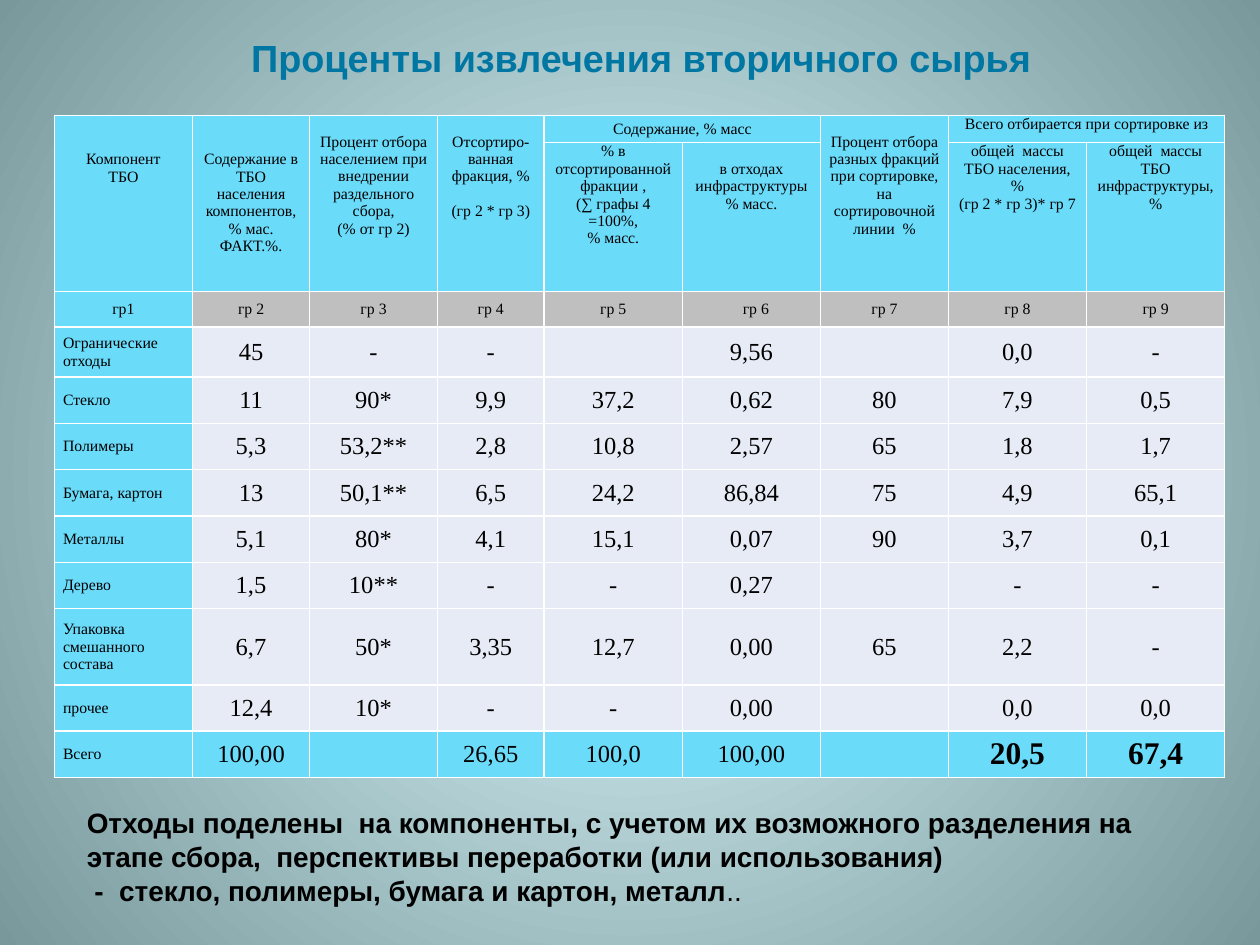
from dataclasses import dataclass

from lxml.etree import SubElement
from pptx import Presentation
from pptx.dml.color import RGBColor
from pptx.enum.text import MSO_ANCHOR, PP_ALIGN
from pptx.oxml.ns import qn
from pptx.util import Pt


@dataclass(frozen=True)
class Theme:
    """Colours, fonts and type sizes of the slide."""
    glow: str = "DEFBFF"
    edge: str = "79989C"
    title: str = "0076A3"
    text: str = "000000"
    accent: str = "6BDBFA"
    index: str = "BFBFBF"
    body: str = "E7EBF5"
    border: str = "FFFFFF"
    heading_font: str = "Arial"
    table_font: str = "Times New Roman"
    title_size: float = 21.6
    note_size: float = 16
    label_size: float = 9
    value_size: float = 14
    total_size: float = 18


THEME = Theme()
LINE = 10
INSET = 5
COLUMN_WIDTHS = [79, 67, 73, 61, 79, 79, 73, 79, 79]
ROW_HEIGHTS = [15.5, 81, 20.5, 28.5] + [26.5] * 5 + [43.5] + [26.5] * 2


@dataclass(frozen=True)
class Header:
    """One heading cell: its place, span, lead above the text and lines."""
    row: int
    column: int
    rows: int
    columns: int
    lead: float
    lines: tuple
    gap: float = 0


HEADERS = [
    Header(0, 0, 2, 1, 2 * LINE, ("Компонент", "ТБО")),
    Header(0, 1, 2, 1, 2 * LINE,
           ("Содержание в ТБО населения компонентов,", "% мас.", "ФАКТ.%.")),
    Header(0, 2, 2, 1, LINE,
           ("Процент отбора населением при внедрении раздельного сбора,", "(% от гр 2)")),
    Header(0, 3, 2, 1, LINE, ("Отсортиро-ванная фракция, %", "(гр 2 * гр 3)"), LINE),
    Header(0, 4, 1, 2, 3, ("Содержание, % масс",)),
    Header(0, 6, 2, 1, LINE,
           ("Процент отбора разных фракций при сортировке, на сортировочной линии  %",)),
    Header(0, 7, 1, 2, 0, ("Всего отбирается при сортировке из",)),
    Header(1, 4, 1, 1, 0,
           ("% в отсортированной фракции ,", "(∑ графы 4 =100%,", "% масс.")),
    Header(1, 5, 1, 1, LINE, ("в отходах инфраструктуры % масс.",)),
    Header(1, 7, 1, 1, 0, ("общей  массы ТБО населения, %", "(гр 2 * гр 3)* гр 7")),
    Header(1, 8, 1, 1, 0, ("общей  массы ТБО инфраструктуры, %",)),
]
INDEX = ["гр1"] + [f"гр {number}" for number in range(2, 10)]
ROWS = [
    ["Огранические отходы", "45", "-", "-", "", "9,56", "", "0,0", "-"],
    ["Стекло", "11", "90*", "9,9", "37,2", "0,62", "80", "7,9", "0,5"],
    ["Полимеры", "5,3", "53,2**", "2,8", "10,8", "2,57", "65", "1,8", "1,7"],
    ["Бумага, картон", "13", "50,1**", "6,5", "24,2", "86,84", "75", "4,9", "65,1"],
    ["Металлы", "5,1", "80*", "4,1", "15,1", "0,07", "90", "3,7", "0,1"],
    ["Дерево", "1,5", "10**", "-", "-", "0,27", "", "-", "-"],
    ["Упаковка смешанного состава", "6,7", "50*", "3,35", "12,7", "0,00", "65", "2,2", "-"],
    ["прочее", "12,4", "10*", "-", "-", "0,00", "", "0,0", "0,0"],
    ["Всего", "100,00", "", "26,65", "100,0", "100,00", "", "20,5", "67,4"],
]


def set_font(font, name, size, color, bold=False):
    """Set every property of a font."""
    font.name, font.size, font.bold = name, Pt(size), bold
    font.color.rgb = RGBColor.from_string(color)


def fill_background(slide):
    """Fill the slide with a circular gradient from its centre."""
    fill = slide.background.fill
    fill.gradient()
    for stop, position, color in zip(fill.gradient_stops, (0, 1), (THEME.glow, THEME.edge)):
        stop.position = position
        stop.color.rgb = RGBColor.from_string(color)
    linear = slide.element.find(".//" + qn("a:lin"))
    gradient = linear.getparent()
    gradient.remove(linear)
    circle = SubElement(gradient, qn("a:path"), path="circle")
    SubElement(circle, qn("a:fillToRect"), l="50000", t="50000", r="50000", b="50000")


def add_text_frame(slide, left, top, width, height):
    """Add a wrapping text box and return its text frame."""
    frame = slide.shapes.add_textbox(Pt(left), Pt(top), Pt(width), Pt(height)).text_frame
    frame.word_wrap = True
    return frame


def add_title(slide, left, top, width, height):
    """Add the centred slide title."""
    frame = add_text_frame(slide, left, top, width, height)
    frame.vertical_anchor = MSO_ANCHOR.MIDDLE
    paragraph = frame.paragraphs[0]
    paragraph.text = "Проценты извлечения вторичного сырья"
    paragraph.alignment = PP_ALIGN.CENTER
    set_font(paragraph.font, THEME.heading_font, THEME.title_size, THEME.title, True)


def add_borders(cell):
    """Draw a thin line on each side of a cell."""
    properties = cell._tc.get_or_add_tcPr()
    for side in ("lnL", "lnR", "lnT", "lnB"):
        line = SubElement(properties, qn("a:" + side), w=str(Pt(1)))
        SubElement(SubElement(line, qn("a:solidFill")), qn("a:srgbClr"), val=THEME.border)


def write_cell(cell, lines, size, bold=False, alignment=PP_ALIGN.CENTER,
               anchor=MSO_ANCHOR.MIDDLE, lead=0, gap=0):
    """Write the lines of a cell, with a lead above and a gap between them."""
    cell.margin_left = cell.margin_right = Pt(INSET)
    cell.margin_top, cell.margin_bottom = Pt(lead), Pt(0)
    cell.vertical_anchor = anchor
    cell.text = "\n".join(lines)
    for number, paragraph in enumerate(cell.text_frame.paragraphs):
        paragraph.alignment = alignment
        if number and gap:
            paragraph.space_before = Pt(gap)
        set_font(paragraph.font, THEME.table_font, size, THEME.text, bold)


def cell_color(row, column):
    """Return the fill of the cell at a row and column."""
    if column == 0 or row < 2 or row == len(ROW_HEIGHTS) - 1:
        return THEME.accent
    return THEME.index if row == 2 else THEME.body


def add_recovery_table(slide, left, top):
    """Add the table of recovery percentages."""
    table = slide.shapes.add_table(
        len(ROW_HEIGHTS), len(COLUMN_WIDTHS), Pt(left), Pt(top),
        Pt(sum(COLUMN_WIDTHS)), Pt(sum(ROW_HEIGHTS))).table
    table.first_row = table.horz_banding = False
    for column, width in zip(table.columns, COLUMN_WIDTHS):
        column.width = Pt(width)
    for row, height in zip(table.rows, ROW_HEIGHTS):
        row.height = Pt(height)
    for row in range(len(ROW_HEIGHTS)):
        for column in range(len(COLUMN_WIDTHS)):
            cell = table.cell(row, column)
            add_borders(cell)
            cell.fill.solid()
            cell.fill.fore_color.rgb = RGBColor.from_string(cell_color(row, column))
    for header in HEADERS:
        cell = table.cell(header.row, header.column)
        if header.rows * header.columns > 1:
            cell.merge(table.cell(header.row + header.rows - 1,
                                  header.column + header.columns - 1))
        write_cell(cell, header.lines, THEME.label_size, anchor=MSO_ANCHOR.TOP,
                   lead=header.lead, gap=header.gap)
    for column, label in enumerate(INDEX):
        write_cell(table.cell(2, column), [label], THEME.label_size)
    table.cell(2, 5).margin_left = Pt(2 * INSET)
    for row, (label, *values) in enumerate(ROWS, 3):
        write_cell(table.cell(row, 0), [label], THEME.label_size, alignment=PP_ALIGN.LEFT)
        for column, value in enumerate(values, 1):
            total = row == len(ROW_HEIGHTS) - 1 and column >= 7
            size = THEME.total_size if total else THEME.value_size
            write_cell(table.cell(row, column), [value], size, total)


def add_note(slide, left, top, width, height):
    """Add the note about the waste components."""
    frame = add_text_frame(slide, left, top, width, height)
    first, second = frame.paragraphs[0], frame.add_paragraph()
    first.text = ("Отходы поделены  на компоненты, с учетом их возможного разделения на "
                  "этапе сбора,  перспективы переработки (или использования)")
    set_font(first.font, THEME.heading_font, THEME.note_size, THEME.text, True)
    for text, bold in ((" -  стекло, полимеры, бумага и картон, металл", True), ("..", False)):
        run = second.add_run()
        run.text = text
        set_font(run.font, THEME.heading_font, THEME.note_size, THEME.text, bold)


def main():
    """Build the slide and save it."""
    presentation = Presentation()
    presentation.slide_width, presentation.slide_height = Pt(720), Pt(540)
    slide = presentation.slides.add_slide(presentation.slide_layouts[6])
    fill_background(slide)
    add_title(slide, 42.5, 15.5, 648, 34)
    add_recovery_table(slide, 31, 66)
    add_note(slide, 42.5, 457, 652, 65.5)
    presentation.save("out.pptx")


if __name__ == "__main__":
    main()
